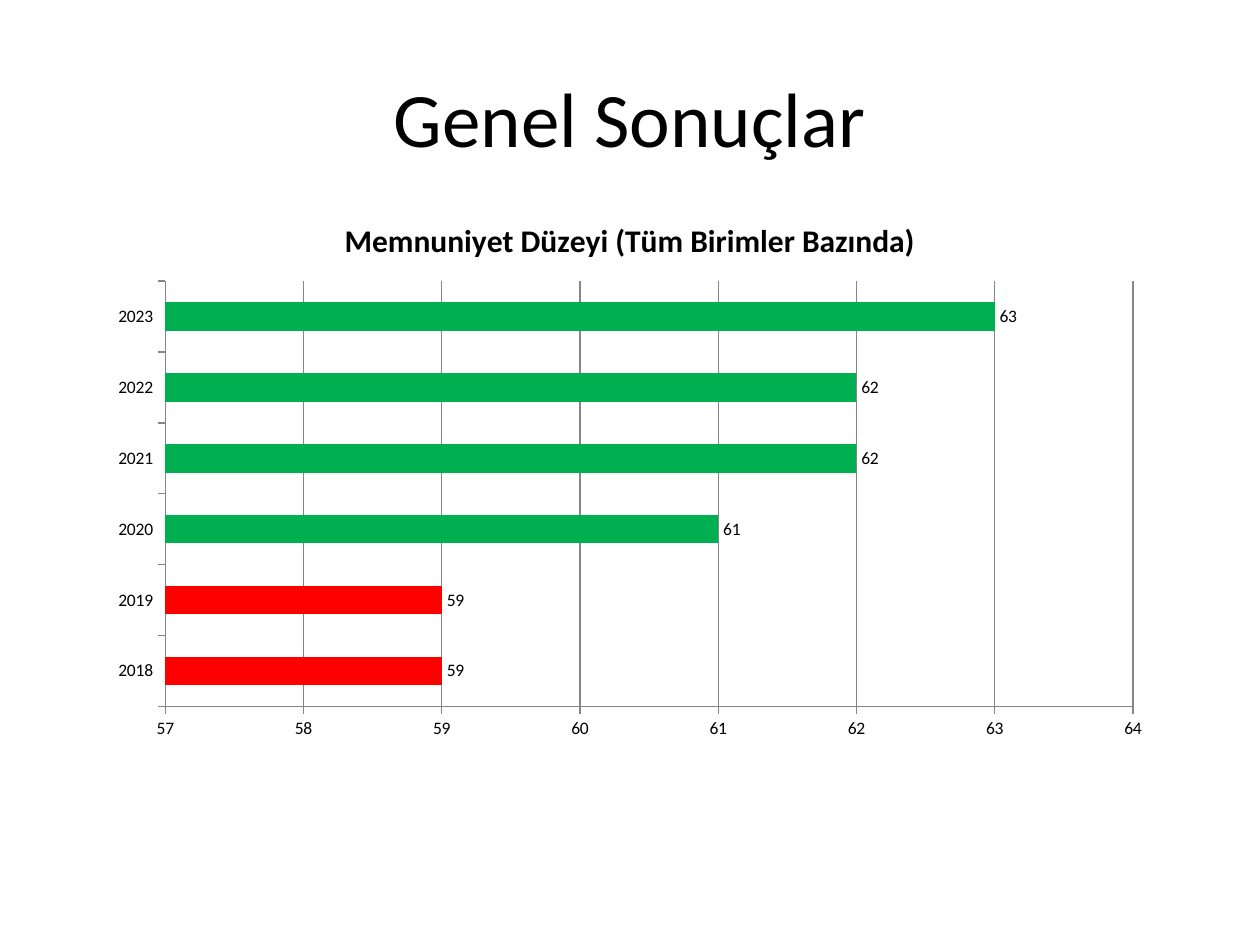
from pptx import Presentation
from pptx.chart.data import CategoryChartData
from pptx.dml.color import RGBColor
from pptx.enum.chart import XL_CHART_TYPE as Kind, XL_LABEL_POSITION as Spot, XL_TICK_MARK as Tick
from pptx.enum.text import MSO_ANCHOR as Anchor, PP_ALIGN as Align
from pptx.util import Inches, Pt

BLACK = RGBColor(0x00, 0x00, 0x00)
GREEN = RGBColor(0x00, 0xB0, 0x50)
RED = RGBColor(0xFF, 0x00, 0x00)
GRAY = RGBColor(0x86, 0x86, 0x86)

HEAD = "Memnuniyet Düzeyi (Tüm Birimler Bazında)"
SCORES = {"2018": 59, "2019": 59, "2020": 61, "2021": 62, "2022": 62, "2023": 63}


def apply(item, form):
    for key, value in form.items():
        setattr(item, key, value)


def paint(fill, color):
    fill.solid()
    fill.fore_color.rgb = color


class Deck:
    face = "Calibri"

    def __init__(self, slide):
        self.slide = slide

    def style(self, font, size, bold=False):
        apply(font, {"name": self.face, "size": Pt(size), "bold": bold})
        font.color.rgb = BLACK

    def title(self, text, box, size):
        frame = self.slide.shapes.add_textbox(*map(Inches, box)).text_frame
        apply(frame, {"word_wrap": True, "vertical_anchor": Anchor.MIDDLE})
        line = frame.paragraphs[0]
        line.alignment = Align.CENTER
        run = line.add_run()
        run.text = text
        self.style(run.font, size)

    def bars(self, head, scores, box, low, high, limit):
        data = CategoryChartData()
        data.categories = list(scores)
        data.add_series(head, list(scores.values()))
        chart = self.slide.shapes.add_chart(Kind.BAR_CLUSTERED, *map(Inches, box), data).chart
        self.style(chart.font, 10)
        apply(chart, {"has_legend": False, "has_title": True})
        frame = chart.chart_title.text_frame
        frame.text = head
        self.style(frame.paragraphs[0].runs[0].font, 18, True)
        plot = chart.plots[0]
        apply(plot, {"gap_width": 150, "vary_by_categories": False, "has_data_labels": True})
        apply(plot.data_labels, {"show_value": True, "position": Spot.OUTSIDE_END})
        self.style(plot.data_labels.font, 10)
        series = plot.series[0]
        paint(series.format.fill, GREEN)
        for spot, score in enumerate(scores.values()):
            if score < limit:
                paint(series.points[spot].format.fill, RED)
        self.axes(chart, low, high)

    def axes(self, chart, low, high):
        cat, val = chart.category_axis, chart.value_axis
        cat.has_major_gridlines = False
        apply(val, {"minimum_scale": low, "maximum_scale": high,
                    "major_unit": 1, "has_major_gridlines": True})
        for axis in (cat, val):
            axis.major_tick_mark = Tick.OUTSIDE
            self.style(axis.tick_labels.font, 10)
        for part in (cat, val, val.major_gridlines):
            part.format.line.color.rgb = GRAY
            part.format.line.width = Pt(0.75)


def main():
    show = Presentation()
    apply(show, {"slide_width": Inches(10), "slide_height": Inches(7.5)})
    deck = Deck(show.slides.add_slide(show.slide_layouts[6]))
    deck.title("Genel Sonuçlar", (0.5, 0.3, 9, 1.25), 44)
    deck.bars(HEAD, SCORES, (0.77, 1.55, 8.46, 4.4), 57, 64, 60)
    show.save("out.pptx")


if __name__ == "__main__":
    main()
